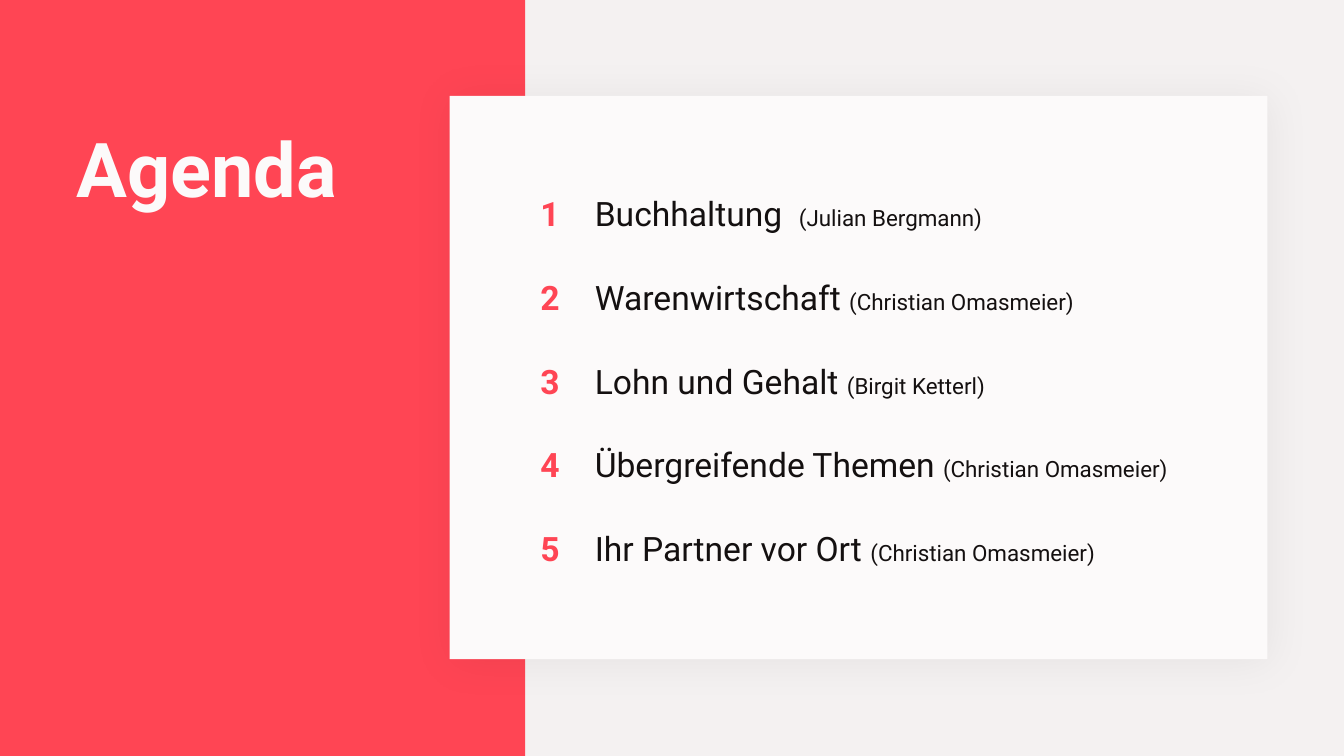
from lxml import etree
from pptx import Presentation
from pptx.dml.color import RGBColor
from pptx.enum import shapes, text
from pptx.oxml import ns
from pptx.util import Inches, Pt

RED = RGBColor(0xFF, 0x45, 0x54)
PAPER = RGBColor(0xFC, 0xFA, 0xFA)
BACK = RGBColor(0xF4, 0xF1, 0xF1)
INK = RGBColor(0x14, 0x10, 0x10)
PLAIN = "{2D5ABB26-0587-4C30-8999-92F81FD0307C}"
TOPICS = [
    ("Buchhaltung  ", "(Julian Bergmann)"),
    ("Warenwirtschaft ", "(Christian Omasmeier)"),
    ("Lohn und Gehalt ", "(Birgit Ketterl)"),
    ("Übergreifende Themen ", "(Christian Omasmeier)"),
    ("Ihr Partner vor Ort ", "(Christian Omasmeier)"),
]


def write(para, words, size=24, color=INK, bold=False, font="Roboto"):
    run = para.add_run()
    run.text = words
    run.font.name = font
    run.font.size = Pt(size)
    run.font.bold = bold
    run.font.color.rgb = color


class Deck:
    def __init__(self):
        self.show = Presentation()
        self.show.slide_width = Inches(13.33)
        self.show.slide_height = Inches(7.5)
        self.slide = self.show.slides.add_slide(self.show.slide_layouts[6])
        fill = self.slide.background.fill
        fill.solid()
        fill.fore_color.rgb = BACK

    def panel(self, box, color):
        panel = self.slide.shapes.add_shape(
            shapes.MSO_SHAPE.RECTANGLE, *map(Inches, box))
        panel.shadow.inherit = False
        panel.fill.solid()
        panel.fill.fore_color.rgb = color
        panel.line.fill.background()
        return panel

    def shade(self, panel):
        effects = panel._element.spPr.find(ns.qn("a:effectLst"))
        shadow = etree.SubElement(
            effects, ns.qn("a:outerShdw"), blurRad=str(Pt(30.8)),
            dist=str(Pt(3)), dir="2700000", algn="tl", rotWithShape="0")
        black = etree.SubElement(shadow, ns.qn("a:srgbClr"), val="000000")
        etree.SubElement(black, ns.qn("a:alpha"), val="5000")

    def title(self, words, box):
        frame = self.slide.shapes.add_textbox(*map(Inches, box)).text_frame
        frame.word_wrap = True
        frame.margin_left = frame.margin_right = 0
        frame.margin_top = frame.margin_bottom = 0
        para = frame.paragraphs[0]
        para.line_spacing = 0.88
        write(para, words, size=54, color=PAPER, bold=True)

    def cell(self, cell, pad=None):
        cell.fill.background()
        cell.vertical_anchor = text.MSO_ANCHOR.MIDDLE
        if pad:
            cell.margin_left = cell.margin_right = Inches(pad)
            cell.margin_top = cell.margin_bottom = Inches(pad)
        para = cell.text_frame.paragraphs[0]
        para.line_spacing = 1.11
        return para

    def agenda(self, topics, box, widths):
        table = self.slide.shapes.add_table(
            len(topics), len(widths), *map(Inches, box)).table
        table.first_row = table.horz_banding = False
        table._tbl.tblPr.find(ns.qn("a:tableStyleId")).text = PLAIN
        for column, width in zip(table.columns, widths):
            column.width = Inches(width)
        for row, (topic, host) in enumerate(topics):
            number = self.cell(table.cell(row, 0), pad=0.15)
            write(number, str(row + 1), color=RED, bold=True)
            entry = self.cell(table.cell(row, 1))
            write(entry, topic)
            write(entry, host, size=16)


def main():
    deck = Deck()
    deck.panel((0, 0, 5.21, 7.5), RED)
    deck.shade(deck.panel((4.46, 0.95, 8.11, 5.59), PAPER))
    deck.title("Agenda", (0.76, 1.33, 3.16, 1.35))
    deck.agenda(TOPICS, (5.21, 1.7, 6.61, 4.15), (0.59, 6.02))
    deck.show.save("out.pptx")


if __name__ == "__main__":
    main()
